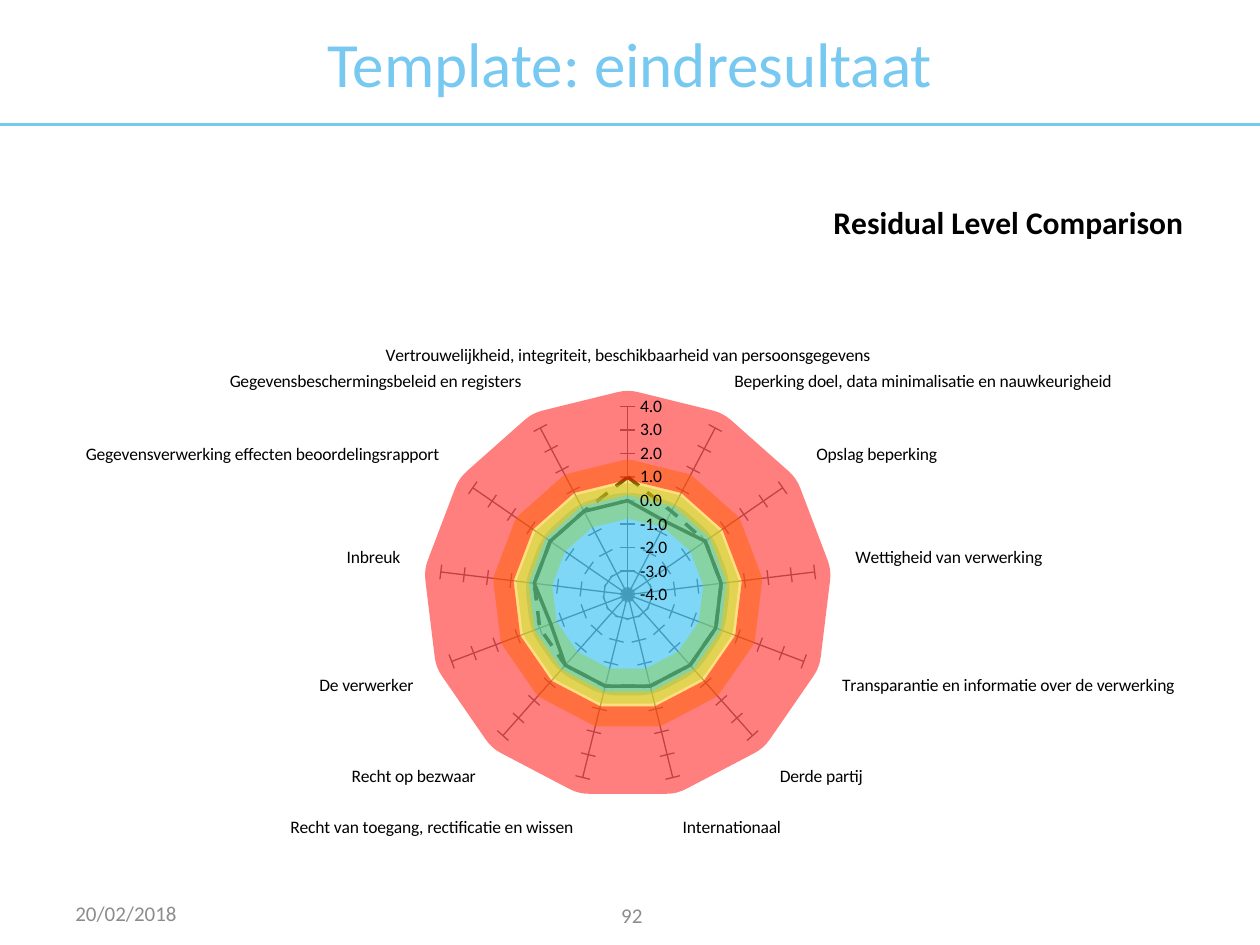
from lxml import etree
from pptx import Presentation
from pptx.chart.data import CategoryChartData
from pptx.dml.color import RGBColor
from pptx.enum.chart import XL_CHART_TYPE, XL_MARKER_STYLE, XL_TICK_MARK
from pptx.enum.dml import MSO_LINE
from pptx.enum.shapes import MSO_CONNECTOR
from pptx.enum.text import MSO_ANCHOR, PP_ALIGN
from pptx.oxml import parse_xml
from pptx.oxml.ns import nsdecls, qn
from pptx.util import Inches, Pt

# Content
TITLE = "Template: eindresultaat"
CHART_TITLE = "Residual Level Comparison"
BLUE, GREY, AXIS_GREY, BLACK = "77C9F2", "8C8C8C", "868686", "000000"
FONT = "Calibri"
CHART_W, CHART_H = 9, 5.75
CATEGORIES = [
    "Vertrouwelijkheid, integriteit, beschikbaarheid van persoonsgegevens",
    "Beperking doel, data minimalisatie en nauwkeurigheid",
    "Opslag beperking",
    "Wettigheid van verwerking",
    "Transparantie en informatie over de verwerking",
    "Derde partij",
    "Internationaal",
    "Recht van toegang, rectificatie en wissen",
    "Recht op bezwaar",
    "De verwerker",
    "Inbreuk",
    "Gegevensverwerking effecten beoordelingsrapport",
    "Gegevensbeschermingsbeleid en registers",
]
N = len(CATEGORIES)
# values, colour, line width, dash, opacity in percent
SERIES = [
    ([0, -0.5, 0, 0, 0, 0, 0, 0, 0, -0.5, 0, 0, 0], BLACK, 2, MSO_LINE.SOLID, 100),
    ([1] + [0] * (N - 1), BLACK, 2, MSO_LINE.DASH, 100),
    ([-2.5] * N, "00B0F0", 76, MSO_LINE.SOLID, 50),
    ([0] * N, "92D050", 20, MSO_LINE.SOLID, 50),
    ([1] * N, "FFC000", 20, MSO_LINE.SOLID, 50),
    ([2.8] * N, "FF0000", 50, MSO_LINE.SOLID, 50),
]
# text, left, top, alignment
FOOTERS = [
    ("92", 3.85, 7.06, PP_ALIGN.CENTER),
    ("20/02/2018", 0.5, 7.05, PP_ALIGN.LEFT),
]


def rgb(color):
    return RGBColor.from_string(color)


def style_font(font, size, color, bold=False):
    font.name, font.size, font.bold = FONT, Pt(size), bold
    font.color.rgb = rgb(color)


def write(tf, text, size, color, align):
    tf.word_wrap = True
    tf.vertical_anchor = MSO_ANCHOR.MIDDLE
    p = tf.paragraphs[0]
    p.alignment = align
    r = p.add_run()
    r.text = text
    style_font(r.font, size, color)


def style_line(line, color, width, dash=MSO_LINE.SOLID, opacity=100):
    line.color.rgb = rgb(color)
    line.width = Pt(width)
    line.dash_style = dash
    if opacity < 100:
        clr = line.fill._xPr.find(".//" + qn("a:srgbClr"))
        etree.SubElement(clr, qn("a:alpha"), val=str(opacity * 1000))


def manual_layout(**inches):
    """Layout given in inches from the chart's top left corner."""
    extent = {"x": CHART_W, "y": CHART_H, "w": CHART_W, "h": CHART_H}
    tags = "".join(f'<c:{k}Mode val="edge"/>' for k in ("x", "y"))
    tags += "".join(f'<c:{k} val="{v / extent[k]}"/>' for k, v in inches.items())
    return parse_xml(f"<c:layout {nsdecls('c')}><c:manualLayout>{tags}"
                     "</c:manualLayout></c:layout>")


prs = Presentation()
prs.slide_width, prs.slide_height = Inches(10), Inches(7.5)
s = prs.slides.add_slide(prs.slide_layouts[5])

# Title and rule
title = s.shapes.title
title.left, title.top = Inches(0), Inches(0)
title.width, title.height = Inches(10), Inches(0.99)
write(title.text_frame, TITLE, 36, BLUE, PP_ALIGN.CENTER)
rule = s.shapes.add_connector(MSO_CONNECTOR.STRAIGHT, Inches(0), Inches(0.99),
                              Inches(10), Inches(0.99))
style_line(rule.line, BLUE, 1.5)
etree.SubElement(rule._element.spPr, qn("a:effectLst"))

# Radar chart
data = CategoryChartData(number_format="General")
data.categories = CATEGORIES
for i, (values, *_) in enumerate(SERIES, 1):
    data.add_series(f"Series {i}", values)
chart = s.shapes.add_chart(XL_CHART_TYPE.RADAR, Inches(0.5), Inches(1.51),
                           Inches(CHART_W), Inches(CHART_H), data).chart
chart.has_legend = False
style_font(chart.font, 10, BLACK)
plot = chart.plots[0]
plot.vary_by_categories = False
for series, (_, *line) in zip(plot.series, SERIES):
    series.marker.style = XL_MARKER_STYLE.NONE
    style_line(series.format.line, *line)

# Axes
cat_axis, val_axis = chart.category_axis, chart.value_axis
cat_axis.has_major_gridlines = True
style_line(cat_axis.major_gridlines.format.line, AXIS_GREY, 0.75)
val_axis.has_major_gridlines = False
val_axis.minimum_scale, val_axis.maximum_scale = -4, 4
val_axis.major_unit = 1
val_axis.tick_labels.number_format = "0.0"
val_axis.tick_labels.number_format_is_linked = False
for axis in (cat_axis, val_axis):
    axis.major_tick_mark = XL_TICK_MARK.OUTSIDE
    style_line(axis.format.line, AXIS_GREY, 0.75)

# Chart title and plot position, labels included
chart.has_title = True
r = chart.chart_title.text_frame.paragraphs[0].add_run()
r.text = CHART_TITLE
style_font(r.font, 18, BLACK, bold=True)
title_xml = chart.chart_title._element
plot_xml = chart._chartSpace.chart.plotArea
for parent in (title_xml, plot_xml):
    for old in parent.findall(qn("c:layout")):
        parent.remove(old)
title_xml.find(qn("c:tx")).addnext(manual_layout(x=6.07, y=0.04))
title_xml.find(qn("c:overlay")).set("val", "1")
plot_xml.insert(0, manual_layout(x=0.18, y=0.74, w=8.64, h=4.89))

# Slide number and date
for text, left, top, align in FOOTERS:
    box = s.shapes.add_textbox(Inches(left), Inches(top), Inches(2.33), Inches(0.4))
    write(box.text_frame, text, 12, GREY, align)

prs.save("out.pptx")
